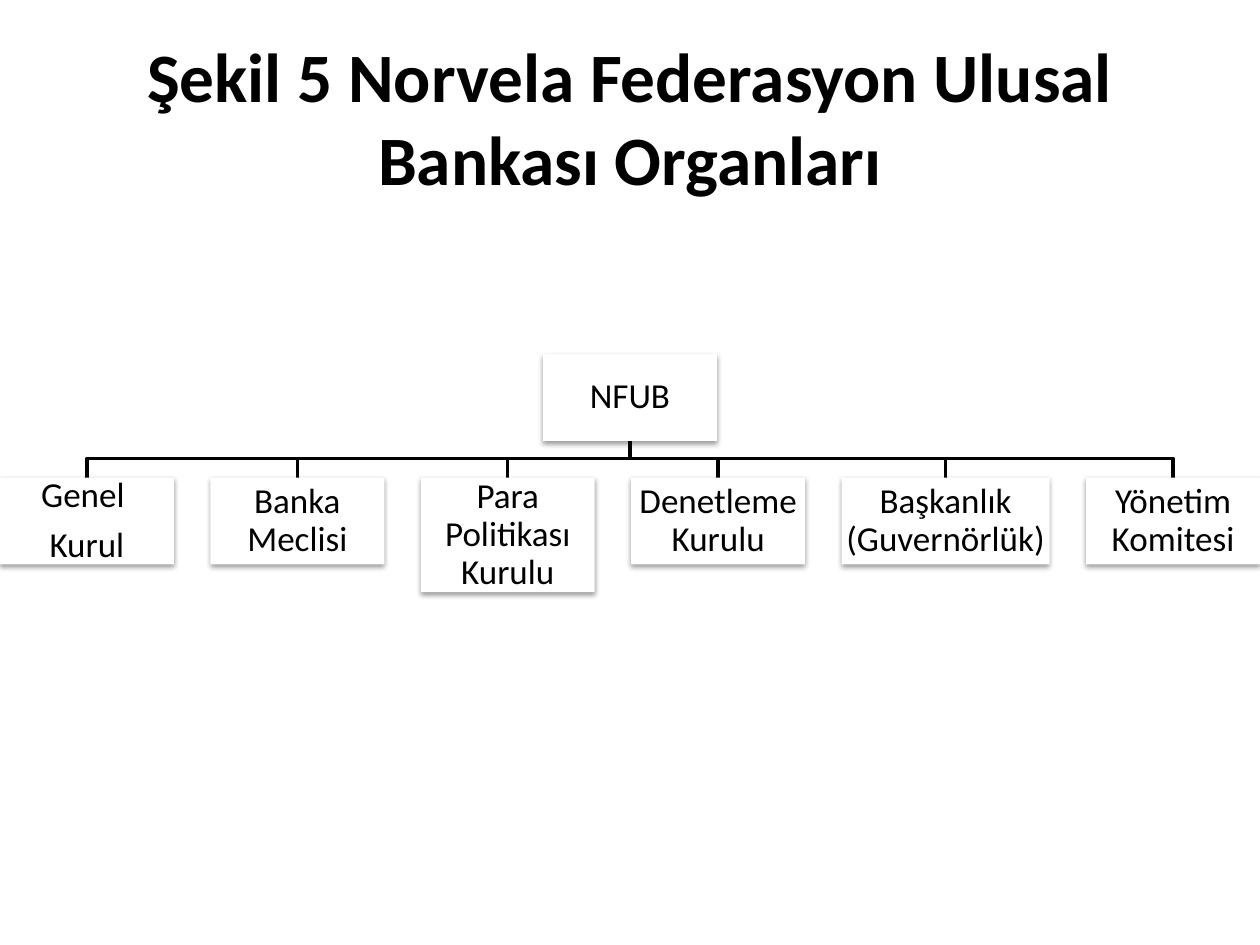
"""Build an organisation chart slide of a bank's organs."""
from lxml.etree import SubElement
from pptx import Presentation
from pptx.dml.color import RGBColor
from pptx.enum.shapes import MSO_SHAPE
from pptx.enum.text import MSO_ANCHOR, PP_ALIGN
from pptx.oxml.ns import qn
from pptx.util import Inches, Pt

BLACK = RGBColor(0, 0, 0)
WHITE = RGBColor(255, 255, 255)
FONT = "Calibri"
CENTER, ROOT_TOP, BRANCH_Y, ORGAN_TOP = 5, 2.81, 3.64, 3.79
BOX_WIDTH, BOX_HEIGHT, GAP = 1.38, 0.69, 0.29
ORGANS = [
    ("Genel \nKurul", BOX_WIDTH, BOX_HEIGHT),
    ("Banka Meclisi", BOX_WIDTH, BOX_HEIGHT),
    ("Para Politikası Kurulu", BOX_WIDTH, 0.91),
    ("Denetleme Kurulu", BOX_WIDTH, BOX_HEIGHT),
    ("Başkanlık (Guvernörlük)", 1.65, BOX_HEIGHT),
    ("Yönetim Komitesi", BOX_WIDTH, BOX_HEIGHT),
]


def format_paragraph(paragraph, size, bold=False):
    paragraph.alignment = PP_ALIGN.CENTER
    for run in paragraph.runs:
        run.font.name = FONT
        run.font.size = Pt(size)
        run.font.bold = bold
        run.font.color.rgb = BLACK


def add_box(shapes, label, left, top, width, height):
    box = shapes.add_shape(
        MSO_SHAPE.RECTANGLE, Inches(left), Inches(top), Inches(width), Inches(height)
    )
    box.fill.solid()
    box.fill.fore_color.rgb = WHITE
    box.line.fill.background()
    box.shadow.inherit = False
    effects = box._element.spPr.find(qn("a:effectLst"))
    shadow = SubElement(
        effects, qn("a:outerShdw"), blurRad=str(Pt(3.1)), dist=str(Pt(1.6)),
        dir="5400000", rotWithShape="0",
    )
    shade = SubElement(shadow, qn("a:srgbClr"), val=str(BLACK))
    SubElement(shade, qn("a:alpha"), val="38000")

    frame = box.text_frame
    frame.text = label
    frame.word_wrap = True
    frame.vertical_anchor = MSO_ANCHOR.MIDDLE
    frame.margin_left = frame.margin_right = Inches(0.01)
    frame.margin_top = frame.margin_bottom = Inches(0.01)
    for paragraph in frame.paragraphs:
        format_paragraph(paragraph, 20)
        paragraph.line_spacing = 0.9
        paragraph.space_after = Pt(7)


presentation = Presentation()
presentation.slide_width = Inches(10)
presentation.slide_height = Inches(7.5)
slide = presentation.slides.add_slide(presentation.slide_layouts[5])

title = slide.shapes.title
title.left, title.top = Inches(0.5), Inches(0.3)
title.width, title.height = Inches(9), Inches(1.25)
title.text_frame.text = "Şekil 5 Norvela Federasyon Ulusal Bankası Organları"
title.text_frame.vertical_anchor = MSO_ANCHOR.MIDDLE
format_paragraph(title.text_frame.paragraphs[0], 39.6, bold=True)

lefts = [sum(width + GAP for _, width, _ in ORGANS[:i]) for i in range(len(ORGANS))]

for left, (_, width, _) in zip(lefts, ORGANS):
    middle = Inches(left + width / 2)
    branch = slide.shapes.build_freeform(Inches(CENTER), Inches(ROOT_TOP + BOX_HEIGHT))
    branch.add_line_segments(
        [
            (Inches(CENTER), Inches(BRANCH_Y)),
            (middle, Inches(BRANCH_Y)),
            (middle, Inches(ORGAN_TOP)),
        ],
        close=False,
    )
    elbow = branch.convert_to_shape()
    elbow.fill.background()
    elbow.line.color.rgb = BLACK
    elbow.line.width = Pt(2)
    elbow.shadow.inherit = False

add_box(slide.shapes, "NFUB", CENTER - BOX_WIDTH / 2, ROOT_TOP, BOX_WIDTH, BOX_HEIGHT)
for left, (organ, width, height) in zip(lefts, ORGANS):
    add_box(slide.shapes, organ, left, ORGAN_TOP, width, height)

presentation.save("out.pptx")
